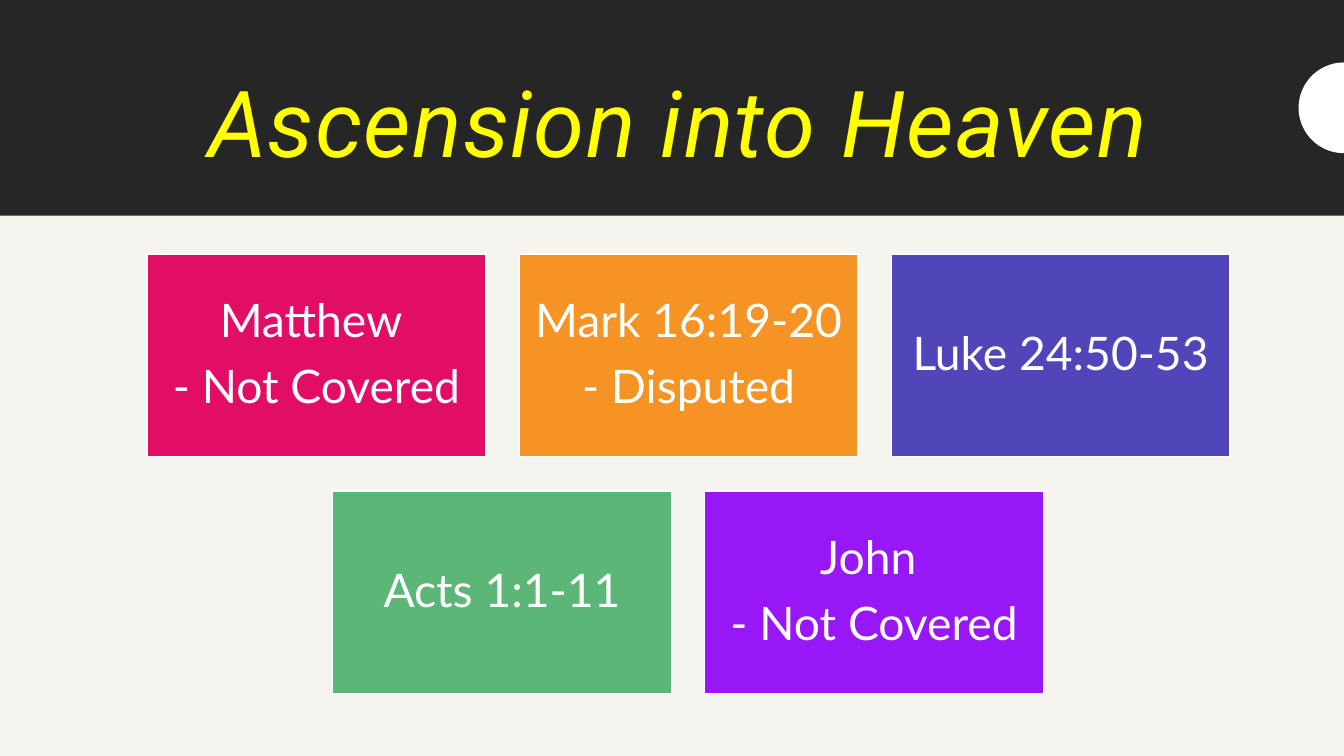
"""Build the slide on where the Ascension into Heaven is told."""
import math
from dataclasses import dataclass

import pptx
import pptx.dml.color
import pptx.enum.shapes
import pptx.enum.text
import pptx.shapes.autoshape
import pptx.slide
import pptx.text.text
import pptx.util

EMU_PER_PX = 9144
SLIDE_WIDTH, SLIDE_HEIGHT = 1333, 750
CARD_WIDTH, CARD_HEIGHT = 336, 201
CARDS_LEFT, CARDS_TOP = 146, 252
COLUMN_PITCH, ROW_PITCH, COLUMNS = 369, 235, 3
CARD_INSET = 14
DISC_CENTRE_Y, DISC_RADIUS, DISC_STEPS = 107, 45, 48

COLOURS = {
    "paper": "F6F4EF",
    "band": "262626",
    "heading": "FFFF00",
    "white": "FFFFFF",
    "matthew": "E20E65",
    "mark": "F59324",
    "luke": "5046B9",
    "acts": "5CB678",
    "john": "9717F7",
}


@dataclass(frozen=True)
class Passage:
    """A scripture card with its lines and fill colour."""

    lines: tuple[str, ...]
    colour: str


PASSAGE_ROWS = (
    (
        Passage(("Matthew ", "- Not Covered"), "matthew"),
        Passage(("Mark 16:19-20", "- Disputed"), "mark"),
        Passage(("Luke 24:50-53",), "luke"),
    ),
    (
        Passage(("Acts 1:1-11",), "acts"),
        Passage(("John ", "- Not Covered"), "john"),
    ),
)


def px(length: int) -> pptx.util.Emu:
    """Turn whole pixels into EMU."""
    return pptx.util.Emu(length * EMU_PER_PX)


def rgb(name: str) -> pptx.dml.color.RGBColor:
    """Look up a named colour."""
    return pptx.dml.color.RGBColor.from_string(COLOURS[name])


def apply(target: object, values: dict[str, object]) -> None:
    """Set each named attribute on the target."""
    for name, value in values.items():
        setattr(target, name, value)


def paint(shape: pptx.shapes.autoshape.Shape, colour: str) -> None:
    """Fill a shape plainly, without outline or shadow."""
    shape.shadow.inherit = False
    shape.fill.solid()
    shape.fill.fore_color.rgb = rgb(colour)
    shape.line.fill.background()


def add_box(slide: pptx.slide.Slide, left: int, top: int, width: int,
            height: int, colour: str) -> pptx.shapes.autoshape.Shape:
    """Add a plain filled rectangle."""
    box = slide.shapes.add_shape(
        pptx.enum.shapes.MSO_SHAPE.RECTANGLE,
        px(left), px(top), px(width), px(height))
    paint(box, colour)
    return box


def write_line(paragraph: pptx.text.text._Paragraph, text: str, font: str,
               size: int, colour: str) -> pptx.text.text._Run:
    """Write one centred line of text."""
    apply(paragraph, {"alignment": pptx.enum.text.PP_ALIGN.CENTER,
                      "line_spacing": 0.9})
    run = paragraph.add_run()
    run.text = text
    apply(run.font, {"name": font, "size": pptx.util.Pt(size)})
    run.font.color.rgb = rgb(colour)
    return run


def add_heading(slide: pptx.slide.Slide) -> None:
    """Add the dark band with the slide title on it."""
    band = add_box(slide, 0, 0, SLIDE_WIDTH, 214, "band")
    heading = slide.shapes.title
    band.element.addnext(heading.element)
    apply(heading, {"left": px(83), "top": px(54),
                    "width": px(1180), "height": px(145)})
    apply(heading.text_frame, {
        "word_wrap": True,
        "auto_size": pptx.enum.text.MSO_AUTO_SIZE.NONE,
        "vertical_anchor": pptx.enum.text.MSO_ANCHOR.MIDDLE,
    })
    run = write_line(heading.text_frame.paragraphs[0],
                     "Ascension into Heaven", "Roboto", 66, "heading")
    run.font.italic = True
    run.font._element.set("spc", "100")


def add_half_disc(slide: pptx.slide.Slide) -> None:
    """Add the white half disc at the right edge."""
    angles = [math.pi * (0.5 + step / DISC_STEPS)
              for step in range(DISC_STEPS + 1)]
    points = [
        (round((SLIDE_WIDTH + DISC_RADIUS * math.cos(angle)) * EMU_PER_PX),
         round((DISC_CENTRE_Y - DISC_RADIUS * math.sin(angle)) * EMU_PER_PX))
        for angle in angles
    ]
    outline = slide.shapes.build_freeform(*points[0])
    outline.add_line_segments(points[1:], close=True)
    paint(outline.convert_to_shape(), "white")


def add_card(slide: pptx.slide.Slide, passage: Passage,
             left: int, top: int) -> None:
    """Add one scripture card."""
    card = add_box(slide, left, top, CARD_WIDTH, CARD_HEIGHT, passage.colour)
    card.line.color.rgb = rgb("white")
    card.line.width = pptx.util.Pt(1)
    frame = card.text_frame
    apply(frame, {
        "word_wrap": True,
        "vertical_anchor": pptx.enum.text.MSO_ANCHOR.MIDDLE,
        **{f"margin_{side}": px(CARD_INSET)
           for side in ("left", "top", "right", "bottom")},
    })
    for index, line in enumerate(passage.lines):
        paragraph = frame.add_paragraph() if index else frame.paragraphs[0]
        paragraph.space_after = pptx.util.Pt(11.5)
        write_line(paragraph, line, "Lato", 33, "white")


def main() -> None:
    """Build and save the presentation."""
    deck = pptx.Presentation()
    apply(deck, {"slide_width": px(SLIDE_WIDTH),
                 "slide_height": px(SLIDE_HEIGHT)})
    slide = deck.slides.add_slide(deck.slide_layouts[5])
    slide.background.fill.solid()
    slide.background.fill.fore_color.rgb = rgb("paper")
    add_heading(slide)
    add_half_disc(slide)
    for row, passages in enumerate(PASSAGE_ROWS):
        row_left = CARDS_LEFT + (COLUMNS - len(passages)) * COLUMN_PITCH // 2
        for column, passage in enumerate(passages):
            add_card(slide, passage, row_left + column * COLUMN_PITCH,
                     CARDS_TOP + row * ROW_PITCH)
    deck.save("out.pptx")


if __name__ == "__main__":
    main()
